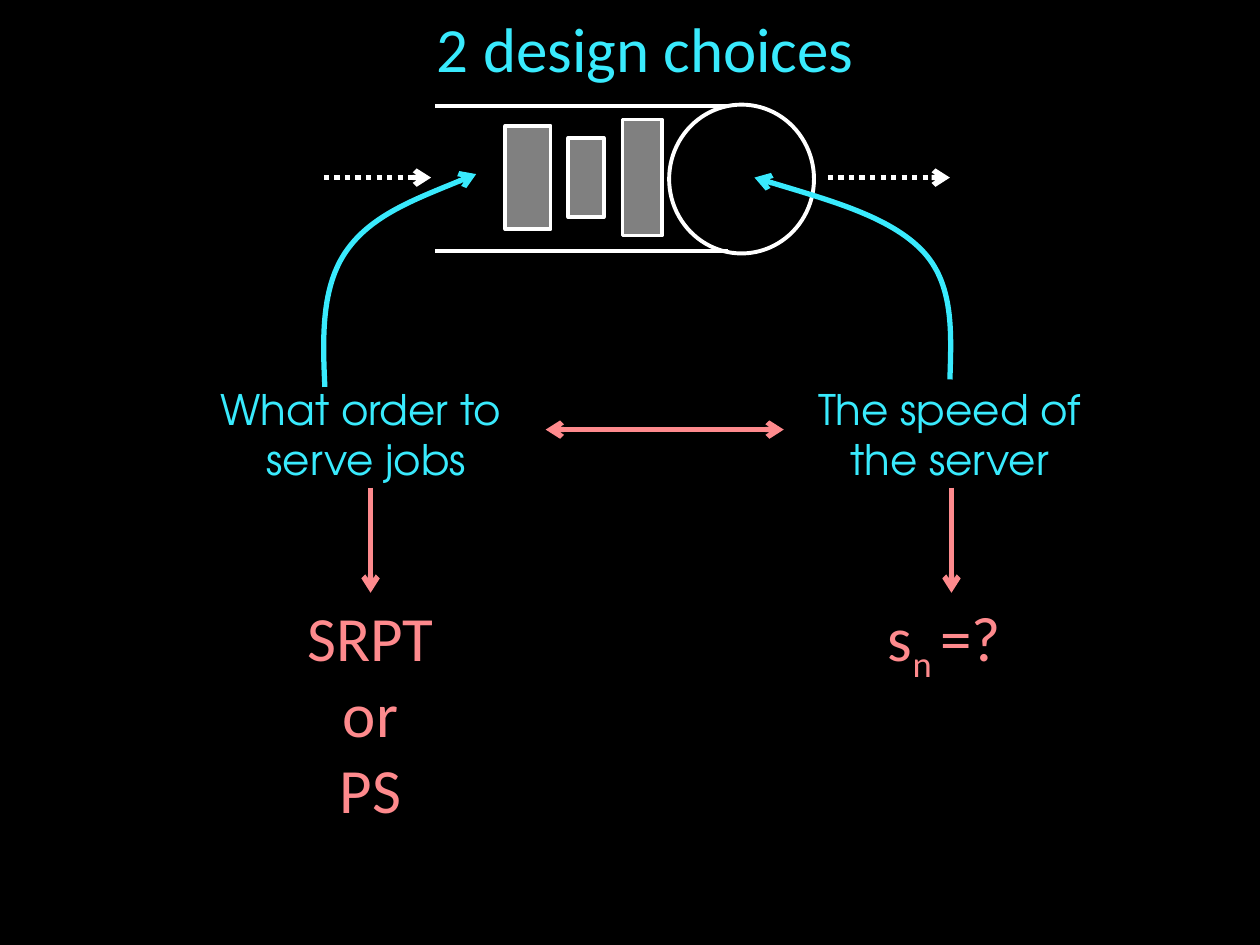
from dataclasses import dataclass

from lxml.etree import SubElement
from pptx import Presentation
from pptx.dml.color import RGBColor
from pptx.enum.dml import MSO_LINE
from pptx.enum.shapes import MSO_CONNECTOR, MSO_SHAPE
from pptx.enum.text import MSO_ANCHOR as Anchor, PP_ALIGN as Align
from pptx.oxml.ns import qn
from pptx.util import Cm, Pt


@dataclass(frozen=True)
class Theme:
    black: RGBColor = RGBColor(0, 0, 0)
    white: RGBColor = RGBColor(255, 255, 255)
    gray: RGBColor = RGBColor(0x80, 0x80, 0x80)
    cyan: RGBColor = RGBColor(0x39, 0xEA, 0xFD)
    pink: RGBColor = RGBColor(0xFE, 0x8A, 0x8D)
    body: str = "Calibri"
    label: str = "TeX Gyre Adventor"
    large: float = 36
    medium: float = 24
    outline: float = 2.25
    arrow: float = 3


@dataclass(frozen=True)
class Box:
    """A region in centimetres."""
    left: float
    top: float
    width: float
    height: float

    def lengths(self):
        return [Cm(v) for v in (self.left, self.top, self.width, self.height)]

    def point(self, x, y):
        return Cm(self.left + x), Cm(self.top + y)

    def inner(self, x, y, width, height):
        return Box(self.left + x, self.top + y, width, height)


THEME = Theme()
SLIDE = Box(0, 0, 25.4, 19.05)


def style_line(shape, color, width, heads=()):
    """Heads names the ends that carry an arrowhead: headEnd, tailEnd."""
    shape.line.color.rgb = color
    shape.line.width = Pt(width)
    for head in heads:
        SubElement(shape.line._get_or_add_ln(), qn(f"a:{head}"), type="arrow")


def add_line(page, start, end, color, width, heads=(), dotted=False):
    line = page.shapes.add_connector(MSO_CONNECTOR.STRAIGHT, *start, *end)
    if dotted:
        line.line.dash_style = MSO_LINE.ROUND_DOT
    style_line(line, color, width, heads)
    SubElement(line._element.spPr, qn("a:effectLst"))
    return line


def add_outline(page, kind, box, fill=None):
    shape = page.shapes.add_shape(kind, *box.lengths())
    shape.shadow.inherit = False
    if fill is None:
        shape.fill.background()
    else:
        shape.fill.solid()
        shape.fill.fore_color.rgb = fill
    style_line(shape, THEME.white, THEME.outline)


def add_curve(page, points, color):
    """Draw cubic curves: a start point, then three points for each curve."""
    builder = page.shapes.build_freeform(*points[0], scale=1.0)
    builder.add_line_segments(points[1:], close=False)
    curve = builder.convert_to_shape()
    curve.shadow.inherit = False
    curve.fill.background()
    outline = next(curve._element.iter(qn("a:path")))
    segments = outline.findall(qn("a:lnTo"))
    for i in range(0, len(segments), 3):
        bezier = SubElement(outline, qn("a:cubicBezTo"))
        for segment in segments[i:i + 3]:
            bezier.append(segment[0])
            outline.remove(segment)
    style_line(curve, color, THEME.arrow, ["headEnd"])


def add_text(page, box, lines, font, size, color, align=Align.CENTER, anchor=Anchor.TOP):
    """Each line is a list of (text, baseline shift in thousandths of a percent)."""
    shape = page.shapes.add_textbox(*box.lengths())
    shape.text_frame.word_wrap = False
    shape.text_frame.vertical_anchor = anchor
    para = shape.text_frame.paragraphs[0]
    para.alignment = align
    for number, line in enumerate(lines):
        if number:
            para.add_line_break()
        for text, baseline in line:
            span = para.add_run()
            span.text = text
            for name, value in {"name": font, "size": Pt(size)}.items():
                setattr(span.font, name, value)
            span.font.color.rgb = color
            if baseline:
                span.font._element.set("baseline", str(baseline))
    return shape


def plain(*lines):
    return [[(line, 0)] for line in lines]


def draw_queue(page, box):
    """Waiting jobs and a server, with dotted arrows for arrivals and departures."""
    middle = box.height / 2 - 0.03
    add_outline(page, MSO_SHAPE.OVAL, box.inner(6.96, 0, 2.92, box.height))
    for y in (0.03, box.height - 0.05):
        add_line(page, box.point(8.15, y), box.point(2.23, y), THEME.white, THEME.outline)
    for left, width, height in ((3.66, 0.91, 2.08), (4.93, 0.71, 1.6), (6.02, 0.79, 2.34)):
        job = box.inner(left, middle - height / 2, width, height)
        add_outline(page, MSO_SHAPE.RECTANGLE, job, THEME.gray)
    for start, end in ((0, 2.16), (10.16, box.width)):
        add_line(page, box.point(start, middle), box.point(end, middle),
                 THEME.white, THEME.arrow, ["tailEnd"], dotted=True)


def draw_choice(page, box, curve, label, center, answer):
    """A labelled choice: a curve up to the queue and an arrow down to its answer."""
    add_curve(page, [box.point(x, y) for x, y in curve], THEME.cyan)
    add_text(page, box.inner(0, 4.1, box.width, 2.31), label,
             THEME.label, THEME.medium, THEME.cyan)
    width, top = 3.1, 8.45
    result = add_text(page, box.inner(center - width / 2, top, width, box.height - top),
                      answer, THEME.body, THEME.large, THEME.pink)
    arrow = add_line(page, box.point(center, 6.33), box.point(center, top),
                     THEME.pink, THEME.arrow, ["tailEnd"])
    arrow.end_connect(result, 0)


def main():
    deck = Presentation()
    deck.slide_width, deck.slide_height = Cm(SLIDE.width), Cm(SLIDE.height)
    page = deck.slides.add_slide(deck.slide_layouts[6])
    page.background.fill.solid()
    page.background.fill.fore_color.rgb = THEME.black

    draw_queue(page, Box(6.53, 2.11, 12.62, 3))
    add_text(page, Box(8.56, 0.18, 11.68, 1.55), plain("2 design choices"),
             THEME.body, THEME.large, THEME.cyan, Align.LEFT, Anchor.MIDDLE)
    draw_choice(page, Box(4.14, 3.5, 6.5, 13),
                [(5.46, 0.01), (4.42, 0.44), (3.35, 0.84), (2.85, 1.55),
                 (2.34, 2.27), (2.36, 3.28), (2.41, 4.3)],
                plain("What order to ", "serve jobs"), 3.33, plain("SRPT", "or", "PS"))
    draw_choice(page, Box(16.21, 3.5, 5.87, 13),
                [(-1, 0.08), (0.35, 0.49), (1.72, 0.87), (2.38, 1.55),
                 (3.02, 2.22), (2.97, 3.18), (2.94, 4.15)],
                plain("The speed of", "the server"), 2.97,
                [[("s", 0), ("n ", -25000), ("=? ", 0)]])
    add_line(page, SLIDE.point(11, 8.66), SLIDE.point(15.8, 8.66),
             THEME.pink, THEME.arrow, ["headEnd", "tailEnd"])
    deck.save("out.pptx")


if __name__ == "__main__":
    main()
